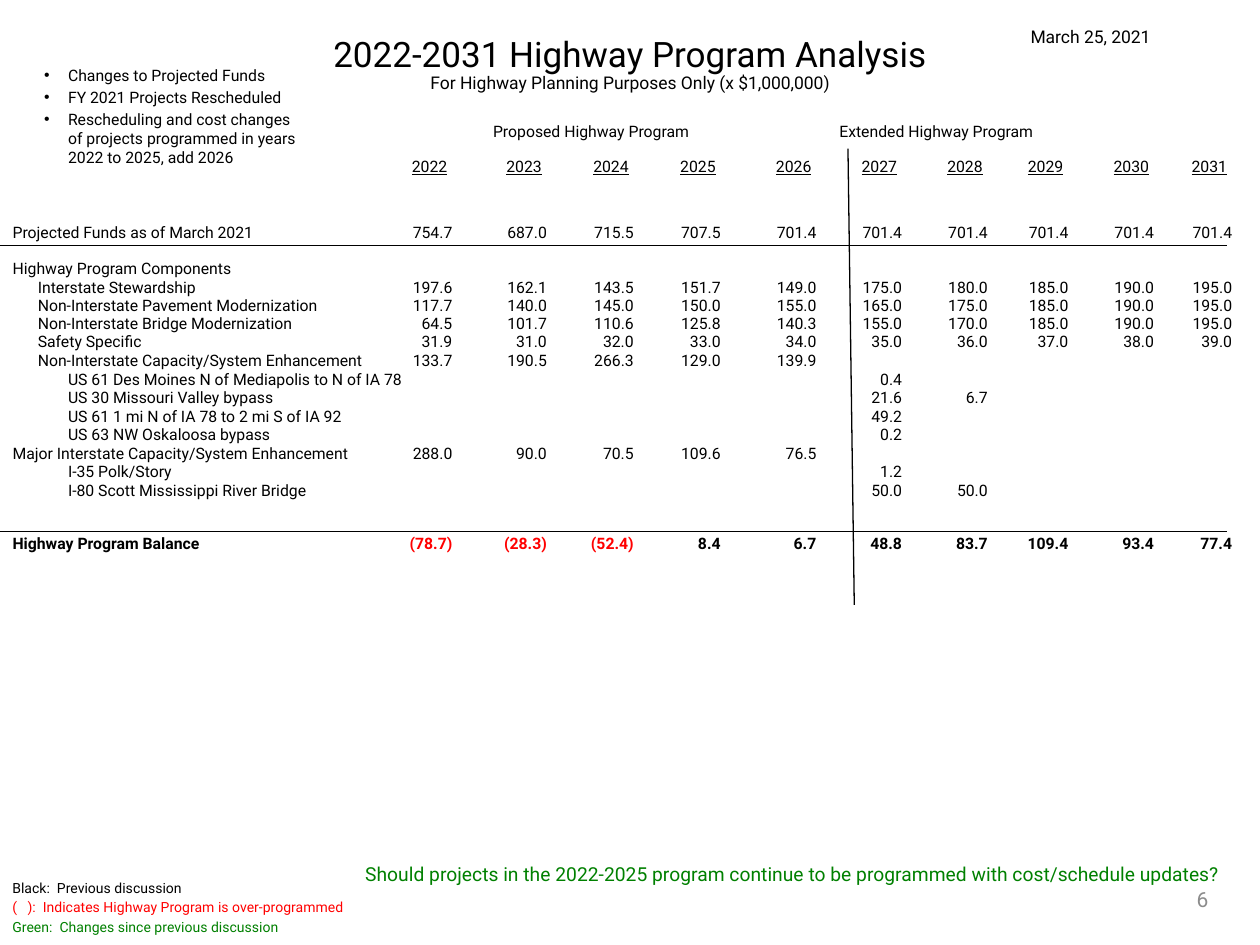
import pptx
import pptx.dml.color
import pptx.enum.shapes
import pptx.enum.text
import pptx.oxml
import pptx.util

Inches = pptx.util.Inches
Pt = pptx.util.Pt
ALIGN = pptx.enum.text.PP_ALIGN
ANCHOR = pptx.enum.text.MSO_ANCHOR

BLACK = pptx.dml.color.RGBColor(0x00, 0x00, 0x00)
RED = pptx.dml.color.RGBColor(0xFF, 0x00, 0x00)
GREEN = pptx.dml.color.RGBColor(0x00, 0x80, 0x00)
GRAY = pptx.dml.color.RGBColor(0x8C, 0x8C, 0x8C)

FONT = "Roboto"
NAMESPACE = 'xmlns:a="http://schemas.openxmlformats.org/drawingml/2006/main"'
ROW_HEIGHT = 0.145
TABLE_TOP = 1.25
COLUMN_EDGES = [0, 3.22, 3.59, 4.34, 5.03, 5.72, 6.48, 7.16, 7.84, 8.48, 9.16, 9.78]
LABEL_INDENTS = [0.1, 0.3, 0.54]

YEARS = [str(year) for year in range(2022, 2032)]
PROGRAM_ROWS = [
    (0, "Projected Funds as of March 2021", "754.7 687.0 715.5 707.5 701.4 701.4 701.4 701.4 701.4 701.4"),
    (0, "Highway Program Components", ""),
    (1, "Interstate Stewardship", "197.6 162.1 143.5 151.7 149.0 175.0 180.0 185.0 190.0 195.0"),
    (1, "Non-Interstate Pavement Modernization", "117.7 140.0 145.0 150.0 155.0 165.0 175.0 185.0 190.0 195.0"),
    (1, "Non-Interstate Bridge Modernization", "64.5 101.7 110.6 125.8 140.3 155.0 170.0 185.0 190.0 195.0"),
    (1, "Safety Specific", "31.9 31.0 32.0 33.0 34.0 35.0 36.0 37.0 38.0 39.0"),
    (1, "Non-Interstate Capacity/System Enhancement", "133.7 190.5 266.3 129.0 139.9"),
    (2, "US 61 Des Moines N of Mediapolis to N of IA 78", "- - - - - 0.4"),
    (2, "US 30 Missouri Valley bypass", "- - - - - 21.6 6.7"),
    (2, "US 61 1 mi N of IA 78 to 2 mi S of IA 92", "- - - - - 49.2"),
    (2, "US 63 NW Oskaloosa bypass", "- - - - - 0.2"),
    (0, "Major Interstate Capacity/System Enhancement", "288.0 90.0 70.5 109.6 76.5"),
    (2, "I-35 Polk/Story", "- - - - - 1.2"),
    (2, "I-80 Scott Mississippi River Bridge", "- - - - - 50.0 50.0"),
    (0, "Highway Program Balance", "(78.7) (28.3) (52.4) 8.4 6.7 48.8 83.7 109.4 93.4 77.4"),
]
ROW_SPANS = {"Projected Funds as of March 2021": 3.6, "Highway Program Components": 2, "Highway Program Balance": 2.9}


def format_paragraph(paragraph, size, color=BLACK, align=ALIGN.LEFT):
    """Set the font and alignment of one paragraph."""
    paragraph.alignment = align
    paragraph.font.name = FONT
    paragraph.font.size = Pt(size)
    paragraph.font.color.rgb = color


def place(shape, left, top, width, height):
    """Move and size a shape in inches."""
    shape.left, shape.top = Inches(left), Inches(top)
    shape.width, shape.height = Inches(width), Inches(height)


def add_text(slide, box, lines, size, align=ALIGN.LEFT, anchor=ANCHOR.TOP):
    """Add a text box with one paragraph for each (text, color) line."""
    frame = slide.shapes.add_textbox(*map(Inches, box)).text_frame
    frame.word_wrap = True
    frame.vertical_anchor = anchor
    frame.text = "\n".join(text for text, _ in lines)
    for paragraph, (_, color) in zip(frame.paragraphs, lines):
        format_paragraph(paragraph, size, color, align)
        paragraph.space_before = Pt(0.2 * size)


def add_rule(slide, start, end):
    """Add a thin black line between two points."""
    line = slide.shapes.add_connector(
        pptx.enum.shapes.MSO_CONNECTOR.STRAIGHT, *map(Inches, start + end))
    line.line.color.rgb = BLACK
    line.line.width = Pt(0.75)
    line._element.spPr.append(pptx.oxml.parse_xml(f"<a:effectLst {NAMESPACE}/>"))


def fill_title(slide):
    """Write the title and its subtitle in the title placeholder."""
    title = slide.shapes.title
    place(title, 0, 0.04, 10, 0.7)
    frame = title.text_frame
    frame.auto_size = pptx.enum.text.MSO_AUTO_SIZE.NONE
    frame.vertical_anchor = ANCHOR.BOTTOM
    frame.margin_top = frame.margin_bottom = 0
    frame.text = "2022-2031 Highway Program Analysis\nFor Highway Planning Purposes Only (x $1,000,000)"
    heading, subtitle = frame.paragraphs
    format_paragraph(heading, 20, align=ALIGN.CENTER)
    format_paragraph(subtitle, 10, align=ALIGN.CENTER)
    subtitle.line_spacing = Pt(10.5)
    subtitle.space_before = Pt(0)


def fill_changes(slide):
    """Write the bulleted list of changes in the body placeholder."""
    body = slide.placeholders[1]
    place(body, 0.25, 0.47, 2.2, 0.92)
    frame = body.text_frame
    frame.auto_size = pptx.enum.text.MSO_AUTO_SIZE.NONE
    frame.text = "\n".join([
        "Changes to Projected Funds",
        "FY 2021 Projects Rescheduled",
        "Rescheduling and cost changes of projects programmed in years 2022 to 2025, add 2026",
    ])
    for paragraph in frame.paragraphs:
        format_paragraph(paragraph, 9)
        paragraph.space_before = Pt(1.8)
        properties = paragraph._p.get_or_add_pPr()
        properties.set("marL", str(Inches(0.19)))
        properties.set("indent", str(-Inches(0.19)))


def clear_borders(cell):
    """Remove the lines on all four sides of a table cell."""
    properties = cell._tc.get_or_add_tcPr()
    for position, side in enumerate(("lnL", "lnR", "lnT", "lnB")):
        properties.insert(position, pptx.oxml.parse_xml(
            f'<a:{side} {NAMESPACE} w="0"><a:noFill/></a:{side}>'))


def fill_cell(cell, text, align, left=0.0, right=0.0):
    """Write one table cell without fill or borders and return its paragraph."""
    cell.fill.background()
    clear_borders(cell)
    cell.margin_top = cell.margin_bottom = 0
    cell.margin_left, cell.margin_right = Inches(left), Inches(right)
    cell.vertical_anchor = ANCHOR.BOTTOM
    paragraph = cell.text_frame.paragraphs[0]
    paragraph.text = text
    paragraph.line_spacing = 0.9
    format_paragraph(paragraph, 9, RED if text.startswith("(") else BLACK, align)
    return paragraph


def add_program_table(slide):
    """Add the table of funds, components and balance by year."""
    heights = [ROW_HEIGHT] + [ROW_HEIGHT * ROW_SPANS.get(label, 1) for _, label, _ in PROGRAM_ROWS]
    table = slide.shapes.add_table(
        len(heights), len(COLUMN_EDGES) - 1, 0, Inches(TABLE_TOP),
        Inches(COLUMN_EDGES[-1]), Inches(sum(heights))).table
    table.first_row = table.horz_banding = False
    for column, start, end in zip(table.columns, COLUMN_EDGES, COLUMN_EDGES[1:]):
        column.width = Inches(end - start)
    for row, height in zip(table.rows, heights):
        row.height = Inches(height)
    fill_cell(table.cell(0, 0), "", ALIGN.LEFT)
    for column, year in enumerate(YEARS, 1):
        fill_cell(table.cell(0, column), year, ALIGN.RIGHT, right=0.04).font.underline = True
    for row, (level, label, figures) in enumerate(PROGRAM_ROWS, 1):
        values = ["" if figure == "-" else figure for figure in figures.split()]
        values += [""] * (len(YEARS) - len(values))
        paragraphs = [fill_cell(table.cell(row, 0), label, ALIGN.LEFT, LABEL_INDENTS[level])]
        paragraphs += [fill_cell(table.cell(row, column), value, ALIGN.RIGHT)
                       for column, value in enumerate(values, 1)]
        for paragraph in paragraphs:
            paragraph.font.bold = row == len(PROGRAM_ROWS)


def main():
    """Build the highway program slide."""
    presentation = pptx.Presentation()
    presentation.slide_width, presentation.slide_height = Inches(10), Inches(7.5)
    slide = presentation.slides.add_slide(presentation.slide_layouts[1])
    fill_title(slide)
    fill_changes(slide)
    add_program_table(slide)
    for left, text in ((3.69, "Proposed Highway Program"), (6.43, "Extended Highway Program")):
        add_text(slide, (left, 0.92, 2, 0.25), [(text, BLACK)], 9, ALIGN.CENTER)
    for height in (1.95, 4.22):
        add_rule(slide, (0, height), (9.74, height))
    add_rule(slide, (6.78, 4.8), (6.73, 1.18))
    add_text(slide, (7.54, 0.16, 2.23, 0.27), [("March 25, 2021", BLACK)], 10, ALIGN.CENTER)
    add_text(slide, (2.8, 6.79, 6.99, 0.29), [
        ("Should projects in the 2022-2025 program continue to be programmed with cost/schedule updates?", GREEN)], 11)
    add_text(slide, (0, 6.93, 3.83, 0.56), [
        ("Black:  Previous discussion", BLACK),
        ("(   ):  Indicates Highway Program is over-programmed", RED),
        ("Green:  Changes since previous discussion", GREEN)], 8)
    add_text(slide, (7.36, 6.94, 2.33, 0.4), [("6", GRAY)], 12, ALIGN.RIGHT, ANCHOR.MIDDLE)
    presentation.save("out.pptx")


if __name__ == "__main__":
    main()
